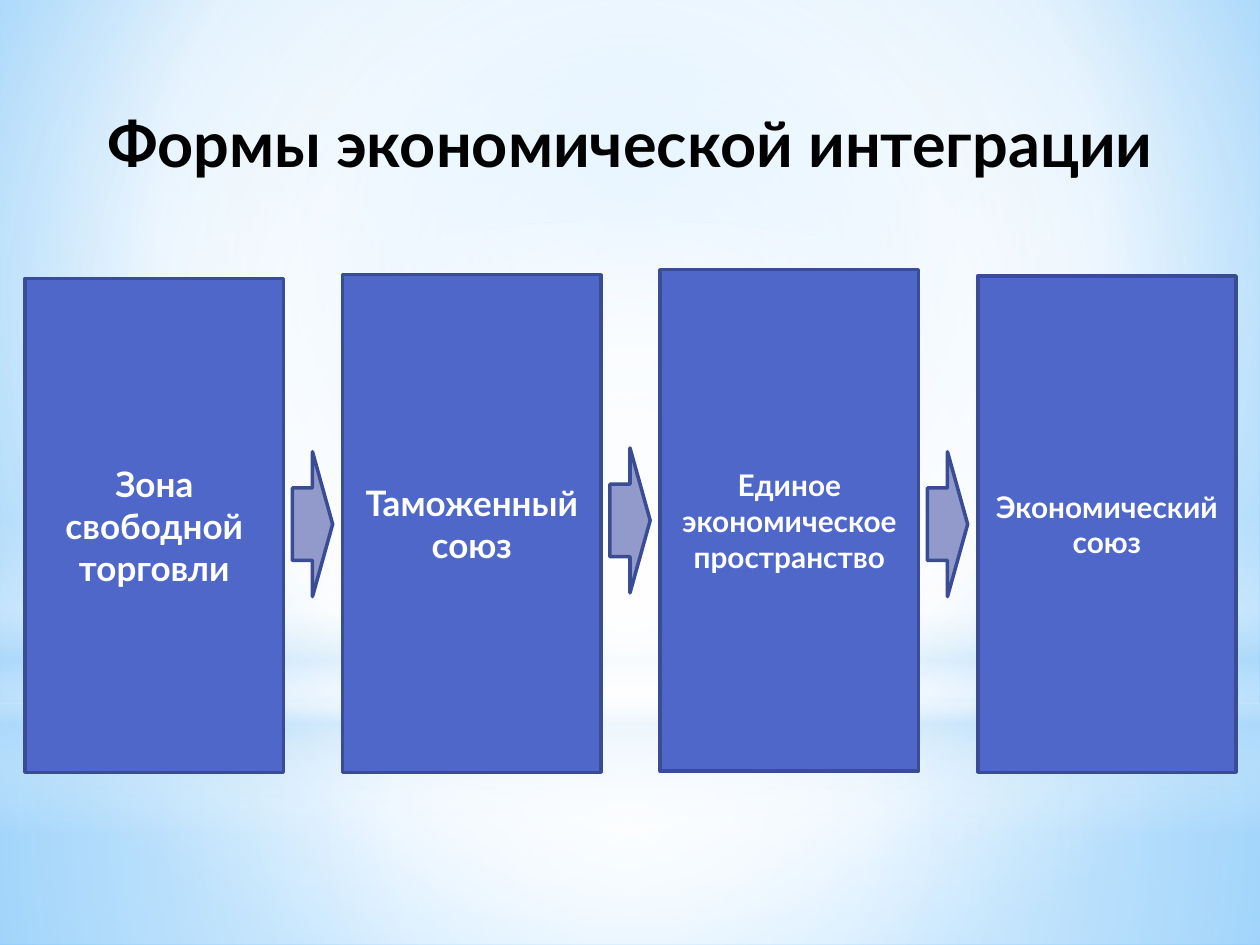
from lxml import etree
from pptx import Presentation
from pptx.dml.color import RGBColor
from pptx.enum.shapes import MSO_SHAPE
from pptx.enum.text import MSO_ANCHOR, PP_ALIGN
from pptx.oxml.ns import qn
from pptx.util import Inches, Pt

RECTANGLE, ELLIPSE, DOWN_ARROW = MSO_SHAPE.RECTANGLE, MSO_SHAPE.OVAL, MSO_SHAPE.DOWN_ARROW
MIDDLE, BOTTOM, CENTER = MSO_ANCHOR.MIDDLE, MSO_ANCHOR.BOTTOM, PP_ALIGN.CENTER

COLORS = {
    "title": "000000", "text": "FFFFFF", "panel": "4E67C8", "arrow": "919ACA",
    "outline": "3A4C94", "white": "FFFFFF", "haze": "B4DCFA",
    "sky": "9ED5FF", "deep_sky": "5BB9FF",
}
TITLE = "Формы экономической интеграции"
STAGES = [
    ("Зона свободной торговли", 20, 2.21, 3.92),
    ("Таможенный союз", 20, 2.18, 3.95),
    ("Единое экономическое пространство", 17, 2.14, 3.98),
    ("Экономический союз", 17, 2.19, 3.94),
]
ARROW_MIDDLES = [4.16, 4.13, 4.16]
PANEL_LEFT, PANEL_STEP, PANEL_WIDTH = 0.2, 2.52, 2.05
ARROW_OFFSET, ARROW_WIDTH, ARROW_HEIGHT = 2.28, 1.15, 0.32

BACKDROP = [(0, "sky", 100), (60, "white", 100), (100, "deep_sky", 100)]
BACKDROP_FOCUS = (20, 10, 20, 60)
CENTER_FOCUS = (50, 50, 50, 50)
LAYERS = [
    (RECTANGLE, 5.58, 1.92, CENTER_FOCUS,
     [(0, "white", 91), (37, "white", 76), (100, "haze", 79)]),
    (RECTANGLE, 0, 5.58, CENTER_FOCUS,
     [(0, "white", 89), (48, "white", 62), (100, "haze", 79)]),
    (RECTANGLE, 4.12, 2.5, None,
     [(0, "white", 0), (29, "white", 30), (45, "haze", 40),
      (55, "white", 26), (65, "haze", 60), (100, "white", 0)]),
    (ELLIPSE, 1.75, 5.58, CENTER_FOCUS, [(0, "white", 100), (56, "white", 0)]),
]


def set_gradient(fill, properties, stops, focus):
    fill.solid()
    gradient = etree.Element(qn("a:gradFill"), rotWithShape="1")
    stop_list = etree.SubElement(gradient, qn("a:gsLst"))
    for position, color, opacity in stops:
        stop = etree.SubElement(stop_list, qn("a:gs"), pos=str(position * 1000))
        value = etree.SubElement(stop, qn("a:srgbClr"), val=COLORS[color])
        etree.SubElement(value, qn("a:alpha"), val=str(opacity * 1000))
    if focus:
        shade = etree.SubElement(gradient, qn("a:path"))
        shade.set("path", "circle")
        edges = {edge: str(part * 1000) for edge, part in zip("ltrb", focus)}
        etree.SubElement(shade, qn("a:fillToRect"), **edges)
    else:
        etree.SubElement(gradient, qn("a:lin"), ang="5400000", scaled="0")
    properties.replace(properties.find(qn("a:solidFill")), gradient)


def add_shape(slide, kind, left, top, width, height):
    shape = slide.shapes.add_shape(
        kind, Inches(left), Inches(top), Inches(width), Inches(height))
    shape.shadow.inherit = False
    return shape


def set_colors(shape, color):
    shape.fill.solid()
    shape.fill.fore_color.rgb = RGBColor.from_string(COLORS[color])
    shape.line.color.rgb = RGBColor.from_string(COLORS["outline"])
    shape.line.width = Pt(2)


def write_text(shape, text, size, color, anchor):
    frame = shape.text_frame
    frame.text = text
    frame.word_wrap = True
    frame.vertical_anchor = anchor
    paragraph = frame.paragraphs[0]
    paragraph.alignment = CENTER
    font = paragraph.runs[0].font
    for name, value in {"name": "Lato", "size": Pt(size), "bold": True}.items():
        setattr(font, name, value)
    font.color.rgb = RGBColor.from_string(COLORS[color])


def main():
    presentation = Presentation()
    presentation.slide_width, presentation.slide_height = Inches(10), Inches(7.5)
    slide = presentation.slides.add_slide(presentation.slide_layouts[5])
    title = slide.shapes.title

    fill = slide.background.fill
    fill.solid()
    set_gradient(fill, slide.element.find(".//" + qn("p:bgPr")), BACKDROP, BACKDROP_FOCUS)
    for kind, top, height, focus, stops in LAYERS:
        layer = add_shape(slide, kind, 0, top, 10, height)
        layer.line.fill.background()
        set_gradient(layer.fill, layer.element.spPr, stops, focus)
        title.element.addprevious(layer.element)

    title.left, title.top = Inches(0), Inches(0.52)
    title.width, title.height = Inches(10), Inches(0.96)
    write_text(title, TITLE, 36, "title", BOTTOM)

    for index, (text, size, top, height) in enumerate(STAGES):
        left = PANEL_LEFT + index * PANEL_STEP
        panel = add_shape(slide, RECTANGLE, left, top, PANEL_WIDTH, height)
        set_colors(panel, "panel")
        write_text(panel, text, size, "text", MIDDLE)

    for index, middle in enumerate(ARROW_MIDDLES):
        center = PANEL_LEFT + index * PANEL_STEP + ARROW_OFFSET
        arrow = add_shape(slide, DOWN_ARROW, center - ARROW_WIDTH / 2,
                          middle - ARROW_HEIGHT / 2, ARROW_WIDTH, ARROW_HEIGHT)
        arrow.rotation = 270
        set_colors(arrow, "arrow")

    presentation.save("out.pptx")


if __name__ == "__main__":
    main()
